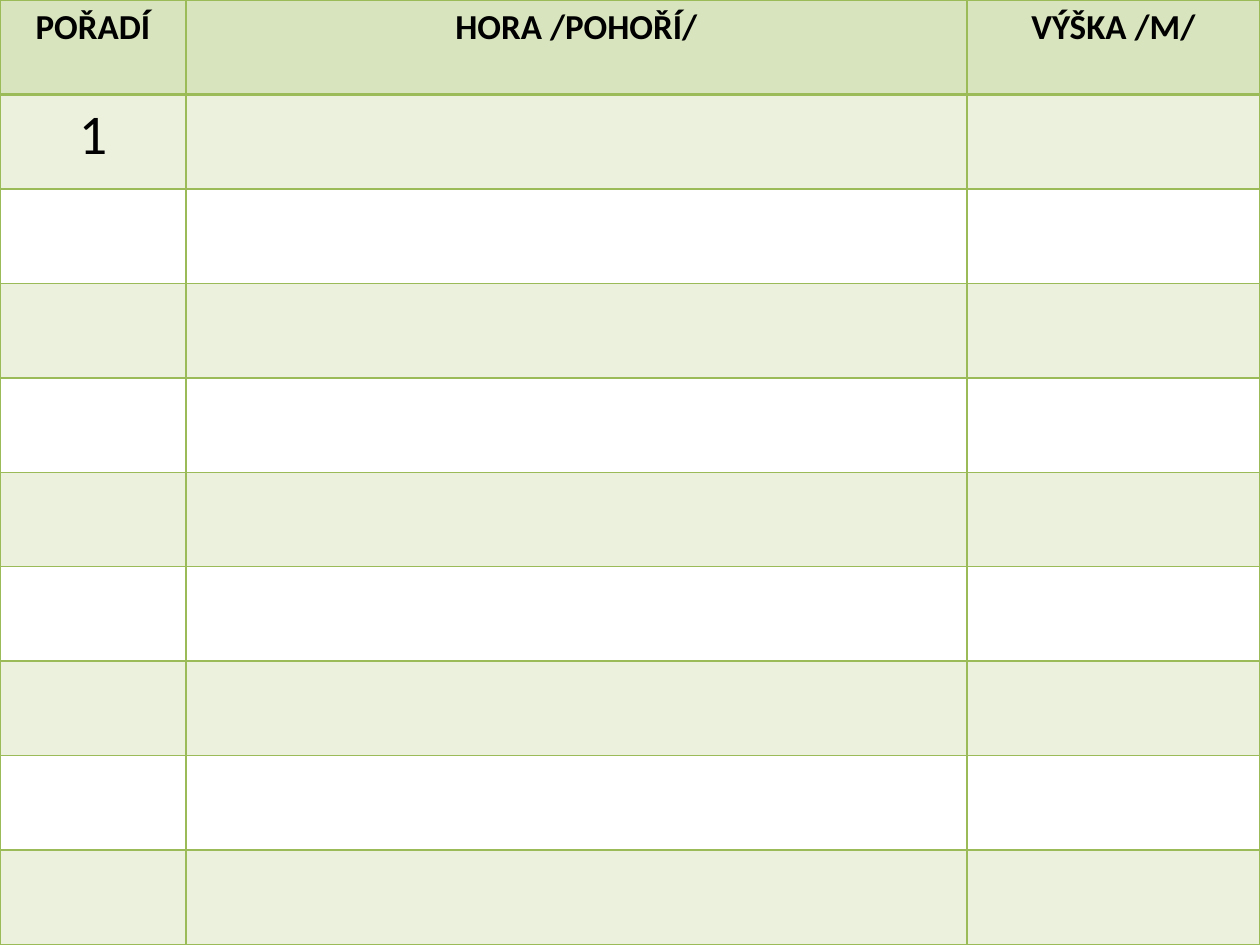
"""Build a slide with a blank ranking table of mountains."""
from dataclasses import dataclass

from lxml.etree import SubElement
from pptx import Presentation
from pptx.dml.color import RGBColor
from pptx.enum.text import PP_ALIGN
from pptx.oxml.ns import qn
from pptx.util import Pt

EMU_PER_PX = 914400 // 126
SLIDE_WIDTH, SLIDE_HEIGHT = 1260, 945
COLUMN_WIDTHS = (186, 781, 293)
ROW_COUNT = 10
HEADINGS = ("POŘADÍ", "HORA /POHOŘÍ/", "VÝŠKA /M/")
FIRST_RANK = "1"


@dataclass(frozen=True)
class Theme:
    """Colours, font and sizes of the slide."""
    font: str = "Calibri"
    ink: str = "000000"
    green: str = "9BBB59"
    header: str = "D7E4BD"
    band_opacity: int = 20
    heading_size: int = 20
    rank_size: int = 32
    rule: int = 1
    header_rule: int = 2


THEME = Theme()


def px(length):
    """Turn pixels into EMU."""
    return length * EMU_PER_PX


def write_text(cell, text, *, size, bold=False, color=THEME.ink, align=PP_ALIGN.CENTER):
    """Put formatted text into a cell."""
    paragraph = cell.text_frame.paragraphs[0]
    paragraph.alignment = align
    run = paragraph.add_run()
    run.text = text
    run.font.name = THEME.font
    run.font.size = Pt(size)
    run.font.bold = bold
    run.font.color.rgb = RGBColor.from_string(color)


def draw_borders(cell, *, top, bottom):
    """Rule all four sides of a cell, before its fill is set."""
    properties = cell._tc.get_or_add_tcPr()
    widths = {"a:lnL": THEME.rule, "a:lnR": THEME.rule, "a:lnT": top, "a:lnB": bottom}
    for side, width in widths.items():
        line = SubElement(properties, qn(side), w=str(Pt(width)))
        paint = SubElement(line, qn("a:solidFill"))
        SubElement(paint, qn("a:srgbClr"), val=THEME.green)


def fill_cell(cell, color=None, opacity=100):
    """Fill a cell with a colour, or leave it clear."""
    if color is None:
        cell.fill.background()
        return
    cell.fill.solid()
    cell.fill.fore_color.rgb = RGBColor.from_string(color)
    if opacity < 100:
        paint = cell._tc.tcPr.find(qn("a:solidFill")).find(qn("a:srgbClr"))
        SubElement(paint, qn("a:alpha"), val=str(opacity * 1000))


def style_cell(cell, row_index):
    """Give a cell the borders and fill of its row."""
    draw_borders(
        cell,
        top=THEME.header_rule if row_index == 1 else THEME.rule,
        bottom=THEME.header_rule if row_index == 0 else THEME.rule,
    )
    if row_index == 0:
        fill_cell(cell, THEME.header)
    elif row_index % 2:
        fill_cell(cell, THEME.green, THEME.band_opacity)
    else:
        fill_cell(cell)


def add_ranking(slide):
    """Add the full-slide table with plain, evenly high rows."""
    ranking = slide.shapes.add_table(
        ROW_COUNT, len(COLUMN_WIDTHS), 0, 0, px(SLIDE_WIDTH), px(SLIDE_HEIGHT)
    ).table
    ranking.first_row = False
    ranking.horz_banding = False
    for column, width in zip(ranking.columns, COLUMN_WIDTHS):
        column.width = px(width)
    for row_index, row in enumerate(ranking.rows):
        row.height = px(SLIDE_HEIGHT) // ROW_COUNT
        for cell in row.cells:
            style_cell(cell, row_index)
    return ranking


def main():
    """Build and save the presentation."""
    presentation = Presentation()
    presentation.slide_width = px(SLIDE_WIDTH)
    presentation.slide_height = px(SLIDE_HEIGHT)
    slide = presentation.slides.add_slide(presentation.slide_layouts[6])
    ranking = add_ranking(slide)
    for column_index, heading in enumerate(HEADINGS):
        write_text(ranking.cell(0, column_index), heading, size=THEME.heading_size, bold=True)
    write_text(ranking.cell(1, 0), FIRST_RANK, size=THEME.rank_size)
    presentation.save("out.pptx")


if __name__ == "__main__":
    main()
